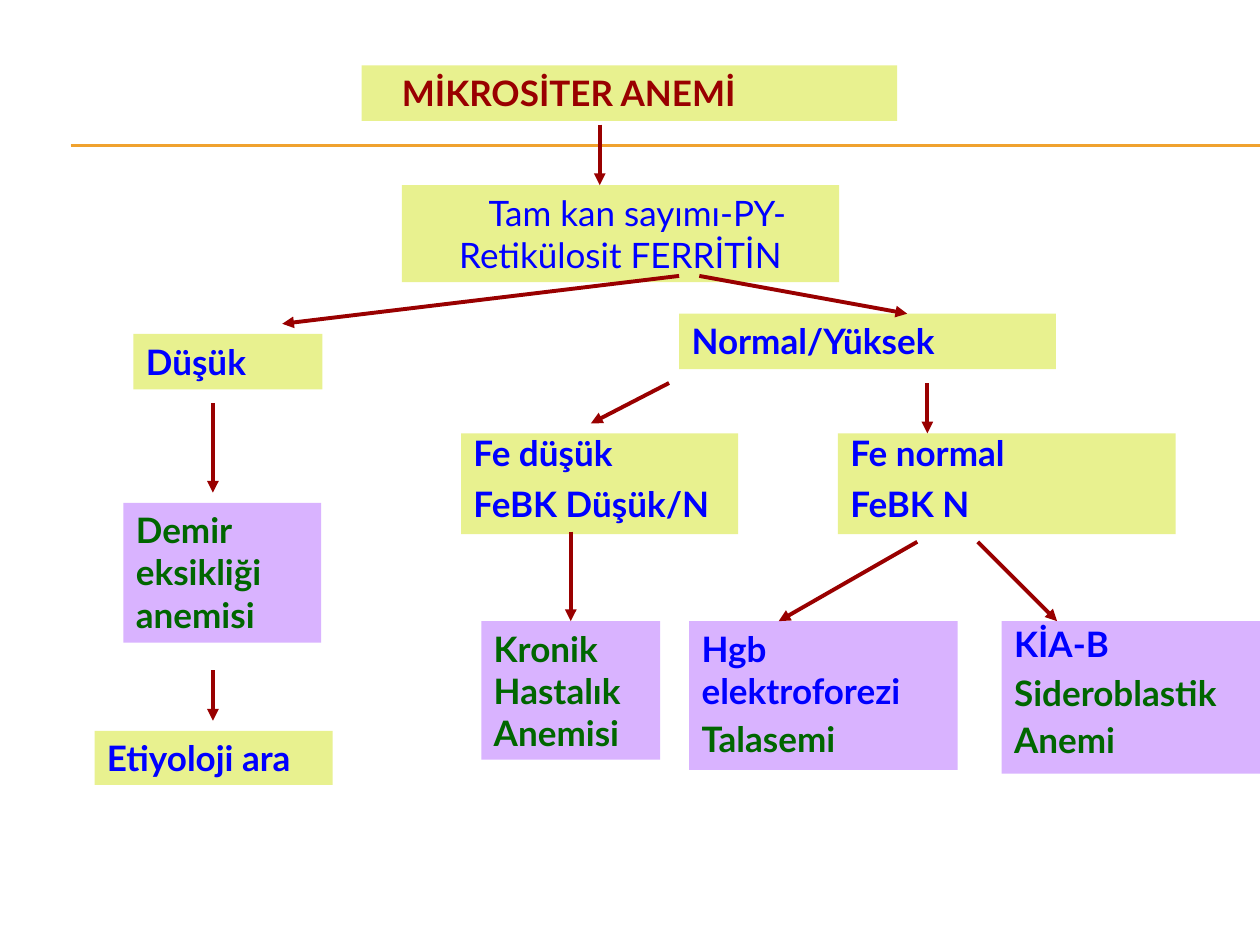
"""Build a decision tree slide for microcytic anaemia."""
import pptx
import pptx.util
import pptx.dml.color
import pptx.enum.shapes
import pptx.enum.text
import pptx.oxml.ns
import lxml.etree

HUES = {"lime": "E8F18F", "lilac": "D9B3FF", "blue": "0000FF",
        "green": "006600", "red": "990000", "gold": "F0A22E"}
deck = pptx.Presentation()
deck.slide_width = pptx.util.Inches(10)
deck.slide_height = pptx.util.Inches(7.5)
col = deck.slide_width / 100
row = deck.slide_height / 75
slide = deck.slides.add_slide(deck.slide_layouts[6])


def hue(name):
    return pptx.dml.color.RGBColor.from_string(HUES[name])


def write(frame, text, color="blue", bold=True, lead=None, indent=0, mid=False):
    par = frame.paragraphs[0]
    if par.runs:
        par = frame.add_paragraph()
        par.space_before = pptx.util.Pt(10)
    par.line_spacing = lead
    aligns = pptx.enum.text.PP_ALIGN
    par.alignment = aligns.CENTER if mid else aligns.LEFT
    if indent:
        par._p.get_or_add_pPr().set("indent", str(int(indent * col)))
    run = par.add_run()
    run.text = text
    run.font.name = "Lato"
    run.font.size = pptx.util.Pt(20)
    run.font.bold = bold
    run.font.color.rgb = hue(color)


green = {"color": "green"}
tight = {"lead": 0.8}
boxes = [
    (28.7, 5.2, 42.5, 4.4, "lime",
     [("MİKROSİTER ANEMİ", {"color": "red", "indent": 2.2})]),
    (31.9, 14.7, 34.7, 7.7, "lime",
     [("Tam kan sayımı-PY-Retikülosit FERRİTİN",
       {"bold": False, "indent": 2.7, "mid": True})]),
    (10.6, 26.5, 15, 4.4, "lime", [("Düşük", {})]),
    (9.8, 39.9, 15.7, 11.1, "lilac", [("Demir eksikliği anemisi", green)]),
    (7.5, 58, 18.9, 4.3, "lime", [("Etiyoloji ara", {})]),
    (53.9, 24.9, 29.9, 4.4, "lime", [("Normal/Yüksek", {})]),
    (36.6, 34.4, 22, 8, "lime", [("Fe düşük", tight), ("FeBK Düşük/N", tight)]),
    (66.5, 34.4, 26.8, 8, "lime", [("Fe normal", tight), ("FeBK N", tight)]),
    (38.2, 49.3, 14.2, 11, "lilac", [("Kronik Hastalık Anemisi", green)]),
    (54.7, 49.3, 21.3, 11.8, "lilac",
     [("Hgb elektroforezi", {}), ("Talasemi", {"color": "green", "lead": 0.7})]),
    (79.5, 49.3, 20.5, 12.1, "lilac",
     [("KİA-B", {"lead": 0.9}),
      ("Sideroblastik", {"color": "green", "lead": 0.7}),
      ("Anemi", {"color": "green", "lead": 0.7})]),
]
rules = [(5.6, y, 100, y, "gold", 0.75) for y in (11.5, 11.6)]
arrows = [(*ends, "red", 2.25) for ends in (
    (47.6, 9.9, 47.6, 14.7), (53.9, 21.9, 22.4, 25.7), (55.5, 21.9, 72, 24.9),
    (16.9, 32, 16.9, 39.1), (16.9, 53.2, 16.9, 57.2),
    (53.1, 30.4, 46.9, 33.6), (73.6, 30.4, 73.6, 34.4),
    (45.3, 42.2, 45.3, 49.3), (72.8, 43, 61.8, 49.3), (77.6, 43, 83.9, 49.3))]

for left, top, wide, high, fill, lines in boxes:
    box = slide.shapes.add_shape(
        pptx.enum.shapes.MSO_SHAPE.RECTANGLE,
        int(left * col), int(top * row), int(wide * col), int(high * row))
    box.shadow.inherit = False
    box.fill.solid()
    box.fill.fore_color.rgb = hue(fill)
    box.line.fill.background()
    frame = box.text_frame
    frame.word_wrap = True
    frame.vertical_anchor = pptx.enum.text.MSO_ANCHOR.TOP
    for text, form in lines:
        write(frame, text, **form)

for x1, y1, x2, y2, color, width in rules + arrows:
    link = slide.shapes.add_connector(
        pptx.enum.shapes.MSO_CONNECTOR.STRAIGHT,
        int(x1 * col), int(y1 * row), int(x2 * col), int(y2 * row))
    link.line.color.rgb = hue(color)
    link.line.width = pptx.util.Pt(width)
    if color == "red":
        lxml.etree.SubElement(link.line._get_or_add_ln(),
                              pptx.oxml.ns.qn("a:tailEnd"), type="triangle")
    lxml.etree.SubElement(link._element.spPr, pptx.oxml.ns.qn("a:effectLst"))

deck.save("out.pptx")
